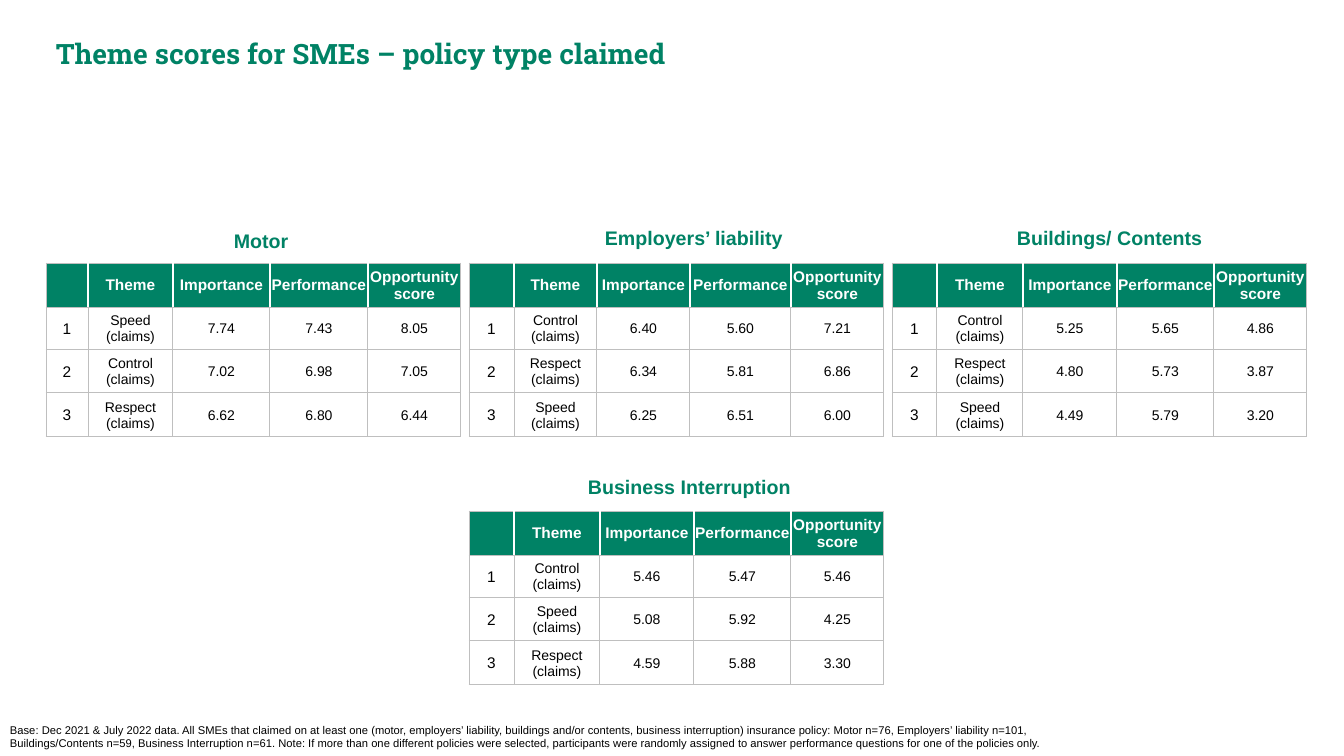
from lxml.etree import SubElement
from pptx import Presentation
from pptx.dml.color import RGBColor
from pptx.enum.text import MSO_ANCHOR as Anchor, MSO_AUTO_SIZE as AutoSize, PP_ALIGN as Align
from pptx.oxml.ns import qn
from pptx.util import Emu, Pt

EMU_PER_PX = 914400 / 100.8
GREEN = RGBColor(0x00, 0x82, 0x65)
GREY = RGBColor(0xBF, 0xBF, 0xBF)
WHITE = RGBColor(0xFF, 0xFF, 0xFF)
BLACK = RGBColor(0x00, 0x00, 0x00)

TITLE = "Theme scores for SMEs – policy type claimed"
BASE = (
    "Base: Dec 2021 & July 2022 data. All SMEs that claimed on at least one (motor, employers’ "
    "liability, buildings and/or contents, business interruption) insurance policy: Motor n=76, "
    "Employers’ liability n=101, Buildings/Contents n=59, Business Interruption n=61. Note: If more "
    "than one different policies were selected, participants were randomly assigned to answer "
    "performance questions for one of the policies only."
)
HEADER = ["", "Theme", "Importance", "Performance", "Opportunity score"]
ROW_HEIGHTS = [44, 43, 43, 44]
TABLE_LEFT, TABLE_STEP = 46, 423
UPPER_TOP, LOWER_TOP = 263, 511

# Heading, heading box, table column, table top, column widths, ranked theme scores
POLICIES = [
    ("Motor", (224, 224, 209, 34), 0, UPPER_TOP, [42, 85, 97, 98, 93],
     [("Speed", "7.74", "7.43", "8.05"),
      ("Control", "7.02", "6.98", "7.05"),
      ("Respect", "6.62", "6.80", "6.44")]),
    ("Employers’ liability", (595, 221, 209, 34), 1, UPPER_TOP, [45, 83, 93, 101, 93],
     [("Control", "6.40", "5.60", "7.21"),
      ("Respect", "6.34", "5.81", "6.86"),
      ("Speed", "6.25", "6.51", "6.00")]),
    ("Buildings/ Contents", (1007, 221, 209, 34), 2, UPPER_TOP, [45, 86, 94, 97, 93],
     [("Control", "5.25", "5.65", "4.86"),
      ("Respect", "4.80", "5.73", "3.87"),
      ("Speed", "4.49", "5.79", "3.20")]),
    ("Business Interruption", (578, 470, 225, 34), 1, LOWER_TOP, [45, 86, 94, 97, 93],
     [("Control", "5.46", "5.47", "5.46"),
      ("Speed", "5.08", "5.92", "4.25"),
      ("Respect", "4.59", "5.88", "3.30")]),
]


def px(length):
    return Emu(round(length * EMU_PER_PX))


def write(frame, text, size, color=BLACK, bold=False, font="Arial", align=Align.LEFT):
    para = frame.paragraphs[0]
    para.alignment = align
    span = para.add_run()
    span.text = text
    span.font.size = Pt(size)
    span.font.name = font
    span.font.bold = bold
    span.font.color.rgb = color


def add_text(page, text, bounds, grow=True, **style):
    box = page.shapes.add_textbox(*map(px, bounds))
    frame = box.text_frame
    frame.word_wrap = True
    frame.auto_size = AutoSize.SHAPE_TO_FIT_TEXT if grow else AutoSize.NONE
    write(frame, text, **style)


def set_borders(cell, left, right):
    """Draw grey rules, except for white ones on the sides given as WHITE."""
    properties = cell._tc.get_or_add_tcPr()
    sides = [("lnL", left), ("lnR", right), ("lnT", GREY), ("lnB", GREY)]
    for position, (side, color) in enumerate(sides):
        width = Pt(1) if color == WHITE else Pt(0.75)
        line = SubElement(properties, qn(f"a:{side}"), w=str(width))
        fill = SubElement(line, qn("a:solidFill"))
        SubElement(fill, qn("a:srgbClr"), val=str(color))
        properties.insert(position, line)


def format_cell(cell, text, is_header, column):
    cell.vertical_anchor = Anchor.MIDDLE
    if not (is_header and column < 2):
        cell.margin_left = cell.margin_right = cell.margin_top = px(1)
        cell.margin_bottom = 0
    if is_header:
        cell.fill.solid()
        cell.fill.fore_color.rgb = GREEN
    else:
        cell.fill.background()
    inner = WHITE if is_header else GREY
    set_borders(cell,
                left=GREY if column == 0 else inner,
                right=GREY if column == len(HEADER) - 1 else inner)
    if text:
        write(cell.text_frame, text,
              size=11 if is_header or column == 0 else 10,
              color=WHITE if is_header else BLACK,
              bold=is_header, align=Align.CENTER)


def add_score_table(page, left, top, widths, scores):
    rows = [HEADER] + [[str(rank), f"{theme} (claims)", *values]
                       for rank, (theme, *values) in enumerate(scores, 1)]
    bounds = (left, top, sum(widths), sum(ROW_HEIGHTS))
    table = page.shapes.add_table(len(rows), len(HEADER), *map(px, bounds)).table
    table.horz_banding = False
    for column, width in zip(table.columns, widths):
        column.width = px(width)
    for row, height in zip(table.rows, ROW_HEIGHTS):
        row.height = px(height)
    for r, texts in enumerate(rows):
        for c, text in enumerate(texts):
            format_cell(table.cell(r, c), text, r == 0, c)


def main():
    deck = Presentation()
    deck.slide_width, deck.slide_height = px(1344), px(756)
    page = deck.slides.add_slide(deck.slide_layouts[6])
    add_text(page, BASE, (0, 718, 1081, 38), grow=False, size=8)
    add_text(page, TITLE, (46, 32, 1238, 44), size=20, color=GREEN, bold=True, font="Roboto Slab")
    for heading, bounds, column, top, widths, scores in POLICIES:
        add_text(page, heading, bounds, size=14, color=GREEN, bold=True)
        add_score_table(page, TABLE_LEFT + column * TABLE_STEP, top, widths, scores)
    deck.save("out.pptx")


if __name__ == "__main__":
    main()
